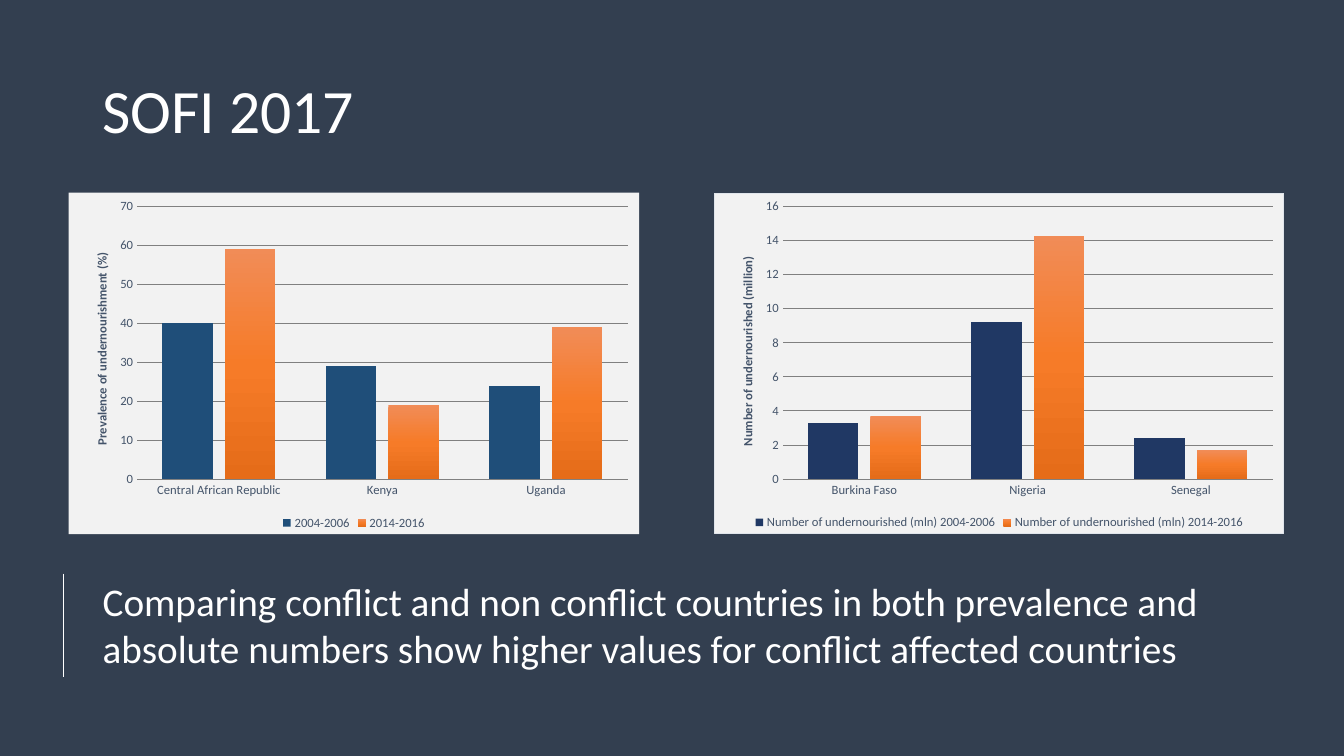
from lxml import etree
from pptx import Presentation
from pptx.chart.data import CategoryChartData
from pptx.dml.color import RGBColor
from pptx.enum import chart as ch, shapes, text
from pptx.oxml import parse_xml
from pptx.oxml.ns import nsdecls, qn
from pptx.util import Inches, Pt

FONT = "Calibri"
COLORS = {
    "back": "333F50", "white": "FFFFFF", "panel": "F2F2F2", "border": "E0E5EB",
    "label": "44546A", "grid": "808080", "navy": "203864", "blue": "1F4E79",
}
ORANGE_STOPS = [(0, "F18C57"), (50, "F67B28"), (100, "E56C19")]
TITLE = "SOFI 2017"
MESSAGE = ("Comparing conflict and non conflict countries in both prevalence and "
           "absolute numbers show higher values for conflict affected countries")
CHARTS = [
    {"left": 0.68, "axis": "Prevalence of undernourishment (%)", "max": 70, "unit": 10,
     "cats": ["Central African Republic", "Kenya", "Uganda"],
     "series": [("2004-2006", (40, 29, 24)), ("2014-2016", (59, 19, 39))],
     "color": "blue", "border": None, "title_top": 0.17},
    {"left": 7.08, "axis": "Number of undernourished (million)", "max": 16, "unit": 2,
     "cats": ["Burkina Faso", "Nigeria", "Senegal"],
     "series": [("Number of undernourished (mln) 2004-2006", (3.3, 9.2, 2.4)),
                ("Number of undernourished (mln) 2014-2016", (3.7, 14.3, 1.7))],
     "color": "navy", "border": "border", "title_top": 0.18},
]
CHART_TOP, CHART_W, CHART_H = 1.91, 5.66, 3.39
PLOT = {"x": 0.12, "y": 0.04, "w": 0.86, "h": 0.8}


def rgb(name):
    return RGBColor.from_string(COLORS[name])


def style_font(font, size, color, bold=False):
    font.name, font.size, font.bold = FONT, Pt(size), bold
    font.color.rgb = rgb(color)


def style_line(line, color, width=0.75):
    line.color.rgb = rgb(color)
    line.width = Pt(width)


def add_text(slide, box, words, size, anchor, spacing, fit):
    tf = slide.shapes.add_textbox(*map(Inches, box)).text_frame
    tf.word_wrap = True
    tf.vertical_anchor = anchor
    tf.auto_size = fit
    p = tf.paragraphs[0]
    p.line_spacing = spacing
    r = p.add_run()
    r.text = words
    style_font(r.font, size, "white")


def set_layout(parent, after, x, y, w=None, h=None):
    for old in parent.findall(qn("c:layout")):
        parent.remove(old)
    modes = '<c:layoutTarget val="inner"/>' if w else ""
    modes += '<c:xMode val="edge"/><c:yMode val="edge"/>'
    sizes = "".join(f'<c:{k} val="{v}"/>' for k, v in zip("xywh", (x, y, w, h)) if v)
    layout = parse_xml(f'<c:layout {nsdecls("c")}><c:manualLayout>{modes}{sizes}'
                       '</c:manualLayout></c:layout>')
    if after is None:
        parent.insert(0, layout)
    else:
        after.addnext(layout)


def fill_orange(series):
    stops = "".join(f'<a:gs pos="{pos * 1000}"><a:srgbClr val="{c}"/></a:gs>'
                    for pos, c in ORANGE_STOPS)
    grad = parse_xml(f'<a:gradFill {nsdecls("a")} rotWithShape="1"><a:gsLst>{stops}</a:gsLst>'
                     '<a:lin ang="5400000" scaled="0"/></a:gradFill>')
    series.format.fill.solid()
    solid = series._element.spPr.find(qn("a:solidFill"))
    solid.getparent().replace(solid, grad)


def fill_panel(chart, border):
    line = (f'<a:ln w="9525"><a:solidFill><a:srgbClr val="{COLORS[border]}"/></a:solidFill></a:ln>'
            if border else '<a:ln><a:noFill/></a:ln>')
    chart._chartSpace.find(qn("c:chart")).addnext(parse_xml(
        f'<c:spPr {nsdecls("c", "a")}><a:solidFill><a:srgbClr val="{COLORS["panel"]}"/>'
        f'</a:solidFill>{line}</c:spPr>'))


def add_column_chart(slide, info):
    data = CategoryChartData()
    data.categories = info["cats"]
    for name, values in info["series"]:
        data.add_series(name, values)
    box = map(Inches, (info["left"], CHART_TOP, CHART_W, CHART_H))
    chart = slide.shapes.add_chart(ch.XL_CHART_TYPE.COLUMN_CLUSTERED, *box, data).chart
    chart.font.name, chart.font.size = FONT, Pt(10)
    chart.has_title = False
    fill_panel(chart, info["border"])

    plot = chart.plots[0]
    plot.gap_width, plot.overlap, plot.vary_by_categories = 100, -24, False
    early, late = plot.series
    early.format.fill.solid()
    early.format.fill.fore_color.rgb = rgb(info["color"])
    fill_orange(late)

    for axis in (chart.category_axis, chart.value_axis):
        axis.major_tick_mark = axis.minor_tick_mark = ch.XL_TICK_MARK.NONE
        style_font(axis.tick_labels.font, 9, "label")
    style_line(chart.category_axis.format.line, "grid")
    val = chart.value_axis
    val.minimum_scale, val.maximum_scale, val.major_unit = 0, info["max"], info["unit"]
    val.format.line.fill.background()
    style_line(val.major_gridlines.format.line, "grid")
    r = val.axis_title.text_frame.paragraphs[0].add_run()
    r.text = info["axis"]
    style_font(r.font, 9, "label", True)
    body = val.axis_title.text_frame._txBody.find(qn("a:bodyPr"))
    body.set("rot", "-5400000")
    body.set("vert", "horz")
    title = val.axis_title._element
    set_layout(title, title.find(qn("c:tx")), 0.04, info["title_top"])
    set_layout(chart._chartSpace.find(".//" + qn("c:plotArea")), None, **PLOT)

    chart.has_legend = True
    chart.legend.position = ch.XL_LEGEND_POSITION.BOTTOM
    chart.legend.include_in_layout = False
    style_font(chart.legend.font, 9, "label")


def main():
    prs = Presentation()
    prs.slide_width, prs.slide_height = Inches(13.33), Inches(7.5)
    s = prs.slides.add_slide(prs.slide_layouts[6])
    back = s.shapes.add_shape(shapes.MSO_SHAPE.RECTANGLE, 0, 0, prs.slide_width, prs.slide_height)
    back.shadow.inherit = False
    back.fill.solid()
    back.fill.fore_color.rgb = rgb("back")
    back.line.fill.background()

    add_text(s, (0.92, 0.4, 11.5, 1.45), TITLE, 44, text.MSO_ANCHOR.MIDDLE, 0.9,
             text.MSO_AUTO_SIZE.NONE)
    rule = s.shapes.add_connector(shapes.MSO_CONNECTOR.STRAIGHT,
                                  *map(Inches, (0.63, 5.69, 0.63, 6.72)))
    style_line(rule.line, "white", 1)
    etree.SubElement(rule._element.spPr, qn("a:effectLst"))
    for info in CHARTS:
        add_column_chart(s, info)
    add_text(s, (0.92, 5.68, 11.95, 1.04), MESSAGE, 28, text.MSO_ANCHOR.TOP, 1.0,
             text.MSO_AUTO_SIZE.SHAPE_TO_FIT_TEXT)
    prs.save("out.pptx")


if __name__ == "__main__":
    main()
